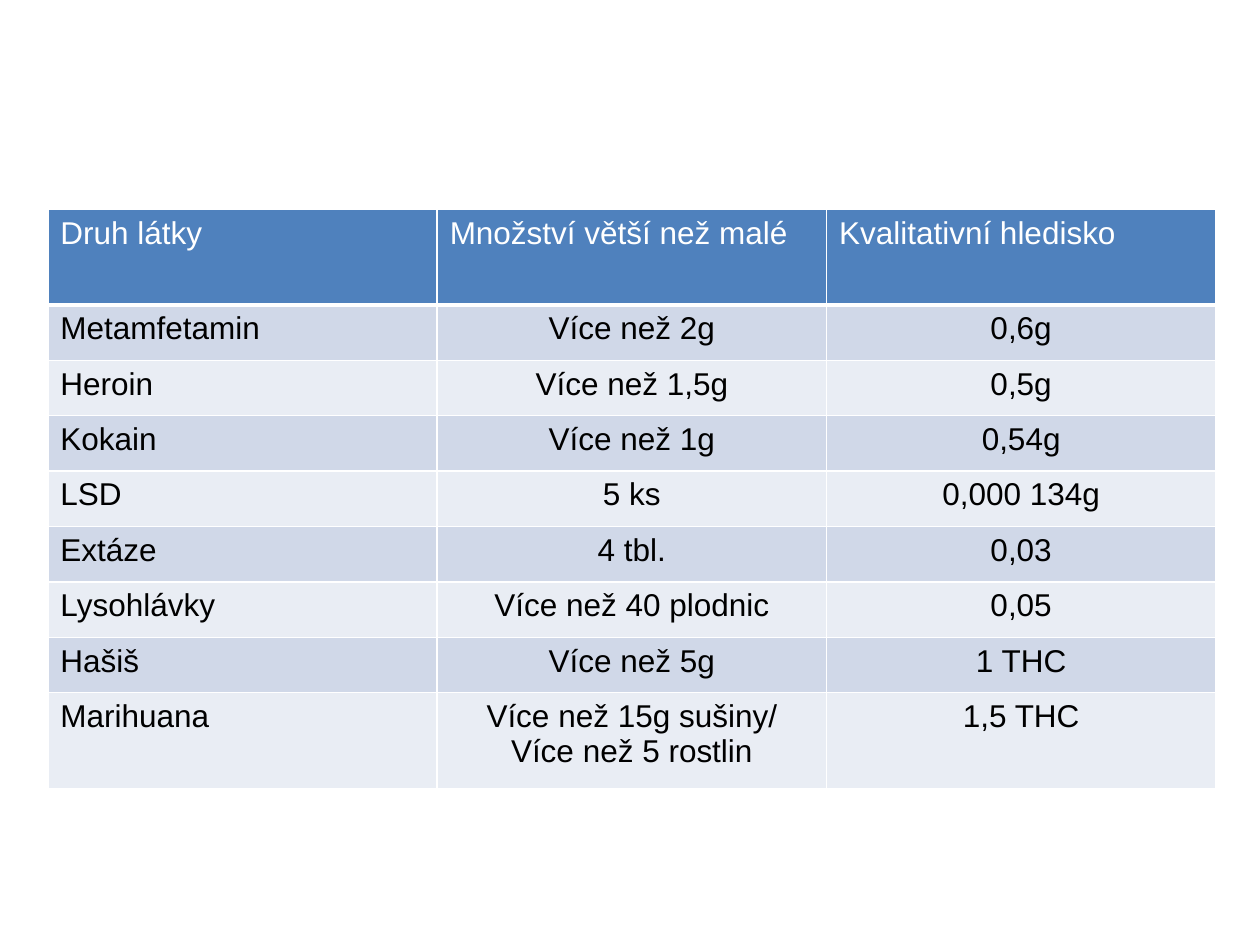
from lxml import etree
from pptx import Presentation
from pptx.dml.color import RGBColor
from pptx.enum.text import PP_ALIGN
from pptx.oxml.ns import qn
from pptx.util import Inches, Pt

LEFT, CENTER = PP_ALIGN.LEFT, PP_ALIGN.CENTER
WHITE = RGBColor(0xFF, 0xFF, 0xFF)
BLACK = RGBColor(0x00, 0x00, 0x00)
HEADER_BLUE = RGBColor(0x4F, 0x81, 0xBD)
BANDS = (RGBColor(0xD0, 0xD8, 0xE8), RGBColor(0xE9, 0xED, 0xF4))

# Each cell holds one line per paragraph.
ROWS = [
    ("Druh látky", "Množství větší než malé", "Kvalitativní hledisko"),
    ("Metamfetamin", "Více než 2g", "0,6g"),
    ("Heroin", "Více než 1,5g", "0,5g"),
    ("Kokain", "Více než 1g", "0,54g"),
    ("LSD", "5 ks", "0,000 134g"),
    ("Extáze", "4 tbl.", "0,03"),
    ("Lysohlávky", "Více než 40 plodnic", "0,05"),
    ("Hašiš", "Více než 5g", "1 THC"),
    ("Marihuana", "Více než 15g sušiny/\nVíce než 5 rostlin", "1,5 THC"),
]
TABLE_LEFT, TABLE_TOP = 0.38, 1.66
COLUMN_WIDTH = 3.09
TALL_ROW, PLAIN_ROW = 0.76, 0.44
HEIGHTS = [TALL_ROW] + [PLAIN_ROW] * (len(ROWS) - 2) + [TALL_ROW]


def add_borders(cell, bottom_width):
    properties = cell._tc.get_or_add_tcPr()
    for side, width in (("L", 1), ("R", 1), ("T", 1), ("B", bottom_width)):
        line = etree.SubElement(properties, qn(f"a:ln{side}"), w=str(Pt(width)))
        fill = etree.SubElement(line, qn("a:solidFill"))
        etree.SubElement(fill, qn("a:srgbClr"), val=str(WHITE))


def write_cell(cell, text, fill, color, alignment):
    cell.fill.solid()
    cell.fill.fore_color.rgb = fill
    for index, words in enumerate(text.split("\n")):
        frame = cell.text_frame
        para = frame.add_paragraph() if index else frame.paragraphs[0]
        para.alignment = alignment
        span = para.add_run()
        span.text = words
        span.font.name = "Arial"
        span.font.size = Pt(18)
        span.font.bold = False
        span.font.color.rgb = color


def main():
    deck = Presentation()
    deck.slide_width, deck.slide_height = Inches(10), Inches(7.5)
    page = deck.slides.add_slide(deck.slide_layouts[6])

    columns = len(ROWS[0])
    table = page.shapes.add_table(
        len(ROWS), columns, Inches(TABLE_LEFT), Inches(TABLE_TOP),
        Inches(columns * COLUMN_WIDTH), Inches(sum(HEIGHTS))).table
    for column in table.columns:
        column.width = Inches(COLUMN_WIDTH)

    for r, (texts, height) in enumerate(zip(ROWS, HEIGHTS)):
        table.rows[r].height = Inches(height)
        header = r == 0
        fill = HEADER_BLUE if header else BANDS[(r - 1) % 2]
        for c, text in enumerate(texts):
            cell = table.cell(r, c)
            add_borders(cell, 3 if header else 1)
            write_cell(cell, text, fill, WHITE if header else BLACK,
                       LEFT if header or c == 0 else CENTER)

    deck.save("out.pptx")


if __name__ == "__main__":
    main()
